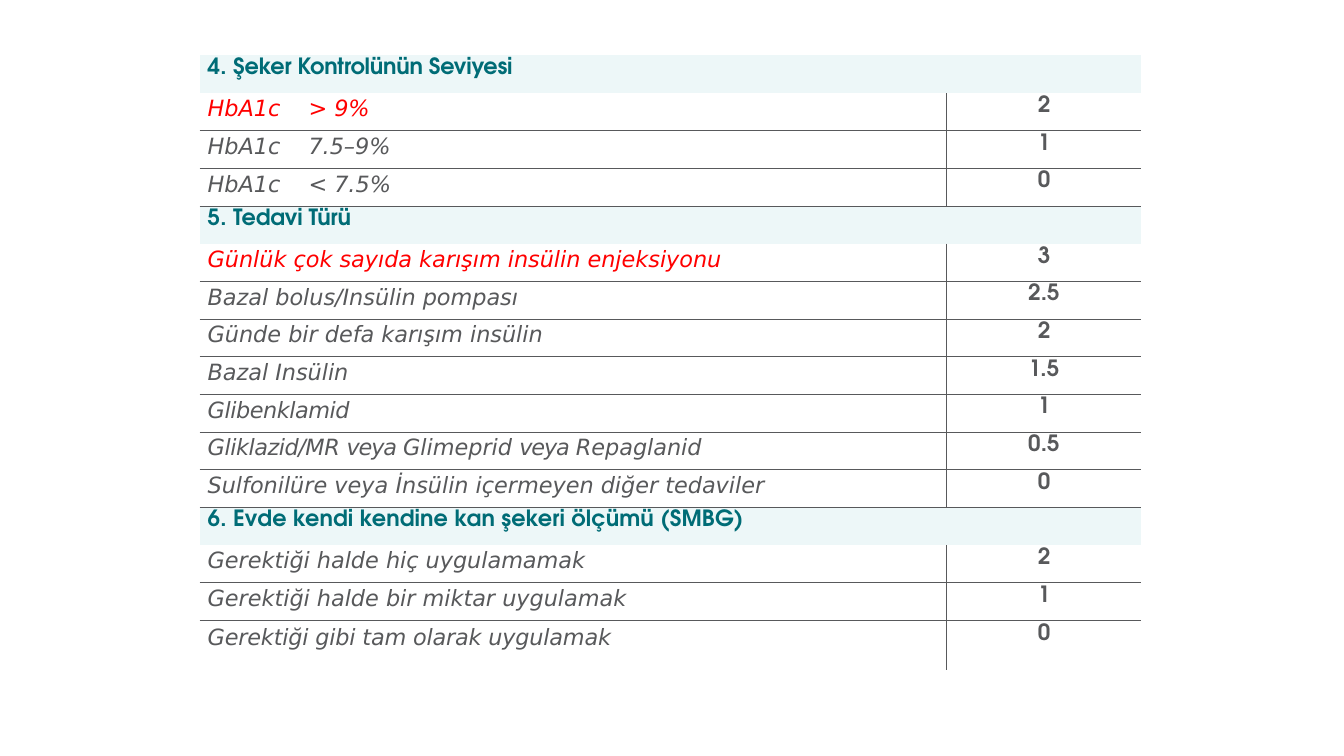
from lxml import etree
from pptx import Presentation
from pptx.dml.color import RGBColor
from pptx.enum import text
from pptx.oxml import ns
from pptx.util import Inches, Pt

TEAL = RGBColor(0x00, 0x6C, 0x76)
PALE = RGBColor(0xED, 0xF7, 0xF8)
GRAY = RGBColor(0x58, 0x59, 0x5B)
RED = RGBColor(0xFF, 0x00, 0x00)
HEAD = "TeX Gyre Adventor"
BODY = "DejaVu Sans"

# Each run is (wording, letter spacing in points).
GROUPS = [
    ([("4. ", 0.1), ("Şeker Kontrolünün Seviyesi", -0.1)], [
        ([("HbA1c\t> 9%", 0)], "2", RED, 1.12),
        ([("HbA1c\t7.5–9%", 0)], "1", GRAY, 1.05),
        ([("HbA1c\t< 7.5%", 0)], "0", GRAY, 1.0),
    ]),
    ([("5. ", 0.1), ("Tedavi Türü", -0.1)], [
        ([("Günlük çok sayıda karışım insülin enjeksiyonu", 0)], "3", RED, None),
        ([("Bazal bolus/Insülin pompası", 0)], "2.5", GRAY, None),
        ([("Günde bir defa karışım insülin", 0)], "2", GRAY, None),
        ([("Bazal Insülin", 0)], "1.5", GRAY, None),
        ([("Glibenklamid", -0.3)], "1", GRAY, None),
        ([("Gliklazid/MR ", -0.3), ("veya ", -0.8), ("Glimeprid ", 0),
          ("veya ", -0.8), ("Repaglanid", 0)], "0.5", GRAY, None),
        ([("Sulfonilüre veya ", 0), ("İ", -0.8),
          ("nsülin içermeyen diğer tedaviler", 0)], "0", GRAY, None),
    ]),
    ([("6. Evde kendi kendine kan şekeri ölçümü (SMBG)", 0.1)], [
        ([("Gerektiği halde hiç uygulamamak", 0)], "2", GRAY, None),
        ([("Gerektiği halde bir miktar uygulamak", 0)], "1", GRAY, None),
        ([("Gerektiği gibi tam olarak uygulamak", -0.1)], "0", GRAY, None),
    ]),
]


def add_edges(cell, sides):
    props = cell._tc.get_or_add_tcPr()
    for side in "LRTB":
        line = etree.SubElement(props, ns.qn("a:ln" + side), w=str(Pt(0.5)))
        if side in sides:
            fill = etree.SubElement(line, ns.qn("a:solidFill"))
            etree.SubElement(fill, ns.qn("a:srgbClr"), val=str(GRAY))
        else:
            etree.SubElement(line, ns.qn("a:noFill"))


def add_tab(para, left):
    tabs = etree.SubElement(para._p.get_or_add_pPr(), ns.qn("a:tabLst"))
    etree.SubElement(tabs, ns.qn("a:tab"), pos=str(Inches(left)), algn="l")


def fill_cell(cell, runs, font, color, sides, last=False, tab=None):
    add_edges(cell, sides)
    cell.fill.background()
    cell.margin_left = cell.margin_right = cell.margin_bottom = 0
    cell.margin_top = Inches(0.04 if last else 0.03)
    para = cell.text_frame.paragraphs[0]
    para.space_before = Pt(5 if last else 3.1)
    if tab:
        add_tab(para, tab)
    for words, gap in runs:
        run = para.add_run()
        run.text = words
        run.font.name = font
        run.font.size = Pt(16)
        run.font.bold = font == HEAD
        run.font.italic = font == BODY
        run.font.color.rgb = color
        run.font._element.set("spc", str(round(gap * 100)))
    return para


def indent(para):
    props = para._p.get_or_add_pPr()
    props.set("marL", str(Inches(0.08)))
    props.set("indent", "0")


def add_title(grid, row, runs):
    left, right = grid.cell(row, 0), grid.cell(row, 1)
    sides = "T" if row else ""
    add_edges(right, sides)
    left.merge(right)
    indent(fill_cell(left, runs, HEAD, TEAL, sides))
    for cell in (left, right):
        cell.fill.solid()
        cell.fill.fore_color.rgb = PALE


def add_score(grid, row, item, first, last):
    runs, score, color, tab = item
    sides = ("" if first else "T") + ("" if last else "B")
    indent(fill_cell(grid.cell(row, 0), runs, BODY, color, sides + "R", last, tab))
    gap = 0.1 if "." in score else 0
    para = fill_cell(grid.cell(row, 1), [(score, gap)], HEAD, GRAY, sides + "L", last)
    para.alignment = text.PP_ALIGN.CENTER


def add_grid(slide):
    count = sum(1 + len(items) for title, items in GROUPS)
    frame = slide.shapes.add_table(
        count, 2, Inches(1.98), Inches(0.55), Inches(9.34), Inches(6.1))
    grid = frame.table
    grid.first_row = grid.horz_banding = False
    for col, width in zip(grid.columns, (7.41, 1.93)):
        col.width = Inches(width)
    foot = 0.49
    for line in grid.rows:
        line.height = Inches((6.1 - foot) / (count - 1))
    grid.rows[count - 1].height = Inches(foot)
    row = 0
    for title, items in GROUPS:
        add_title(grid, row, title)
        for step, item in enumerate(items):
            row += 1
            add_score(grid, row, item, step == 0, row == count - 1)
        row += 1


def main():
    deck = Presentation()
    deck.slide_width = Inches(13.33)
    deck.slide_height = Inches(7.5)
    add_grid(deck.slides.add_slide(deck.slide_layouts[6]))
    deck.save("out.pptx")


if __name__ == "__main__":
    main()
